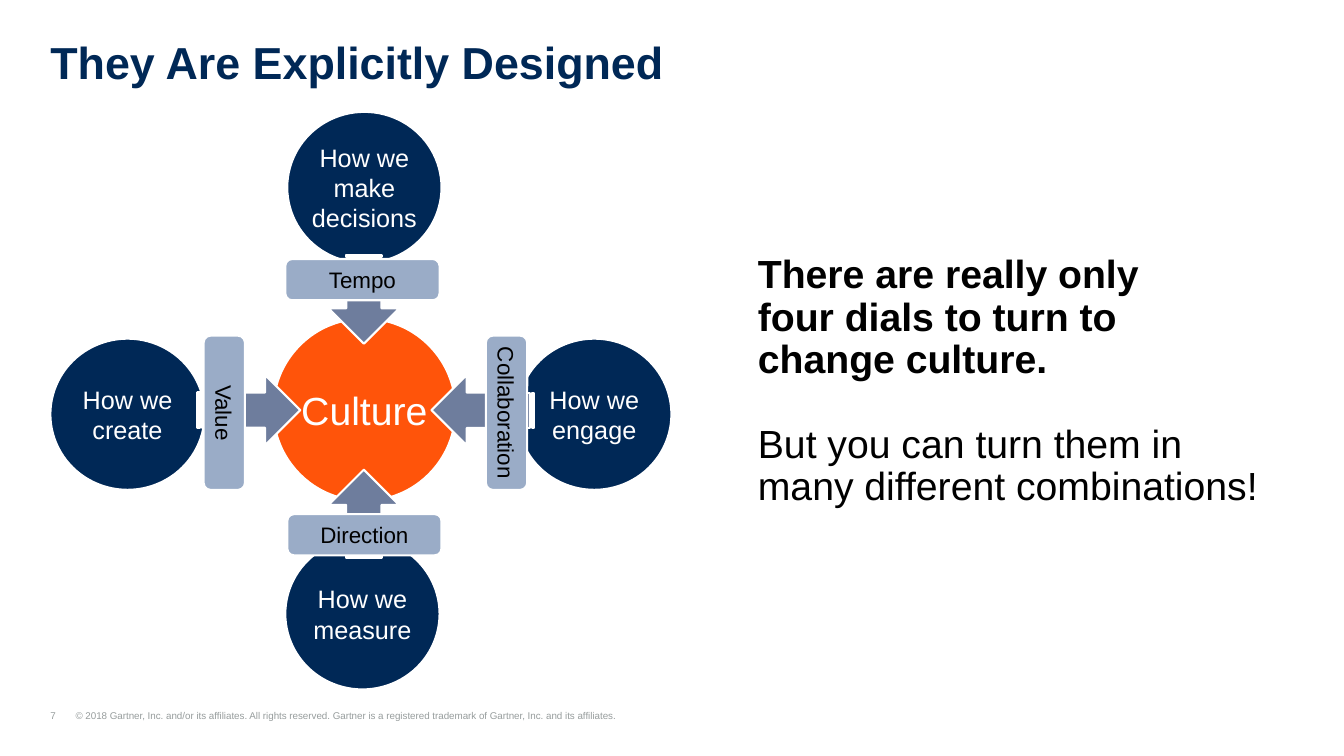
from dataclasses import dataclass

from lxml.etree import SubElement
from pptx import Presentation
from pptx.dml.color import RGBColor
from pptx.enum.shapes import MSO_SHAPE as Kind
from pptx.enum.text import MSO_ANCHOR as Anchor, PP_ALIGN as Align
from pptx.oxml.ns import qn
from pptx.util import Pt

NAVY, ORANGE, WHITE, BLACK = "002856", "FF540A", "FFFFFF", "000000"
SLATE, MIST, GRAY = "6E7D9D", "9AACC7", "979D9D"
INDENT = 18


@dataclass
class Look:
    kind: Kind
    wide: float
    high: float
    fill: str
    size: float = 18
    ink: str = WHITE


@dataclass
class Part:
    look: Look
    left: float
    top: float
    text: str = ""
    turn: float = 0


HUB = Look(Kind.FLOWCHART_CONNECTOR, 130.3, 130.3, ORANGE, 28)
DISC = Look(Kind.FLOWCHART_CONNECTOR, 110.2, 108, NAVY)
LONG = Look(Kind.STRIPED_RIGHT_ARROW, 73.4, 50.4, SLATE)
SHORT = Look(Kind.STRIPED_RIGHT_ARROW, 63.4, 50.4, SLATE)
PILL = Look(Kind.FLOWCHART_ALTERNATE_PROCESS, 110.2, 29.5, MIST, 16, BLACK)

PARTS = [
    Part(HUB, 195.1, 227.5, "Culture"),
    Part(DISC, 205.2, 79.9, "How we make decisions"),
    Part(DISC, 203.8, 384.5, "How we measure"),
    Part(DISC, 36, 241.9, "How we create"),
    Part(DISC, 369.4, 241.9, "How we engage"),
    Part(LONG, 141.1, 267.8),
    Part(SHORT, 228.2, 342, turn=270),
    Part(SHORT, 228.2, 188.6, turn=90),
    Part(LONG, 308.2, 267.8, turn=180),
    Part(PILL, 203.8, 185, "Tempo"),
    Part(PILL, 306.7, 280.1, "Collaboration", 90),
    Part(PILL, 205.2, 367.2, "Direction"),
    Part(PILL, 105.1, 280.1, "Value", 90),
]


def paint(target, color: str) -> None:
    """Set a solid colour on a fill."""
    target.solid()
    target.fore_color.rgb = RGBColor.from_string(color)


def write(frame, text: str, *, size: float, color: str = BLACK, bold: bool = False,
          align=Align.LEFT, space: float = 1, before: float = 0):
    """Fill the frame's first paragraph, or add one if it is taken."""
    para = frame.add_paragraph() if frame.text else frame.paragraphs[0]
    para.text = text
    para.alignment, para.line_spacing = align, space
    if before:
        para.space_before = Pt(before)
    for run in para.runs:
        font = run.font
        font.name, font.size, font.bold = "Arial", Pt(size), bold
        paint(font.fill, color)
    return para


def inset(frame, left: float = 0, rest: float = 0) -> None:
    frame.word_wrap = True
    frame.margin_left = Pt(left)
    frame.margin_top = frame.margin_right = frame.margin_bottom = Pt(rest)


def add_box(slide, left: float, top: float, wide: float, high: float,
            rest: float = 0):
    frame = slide.shapes.add_textbox(Pt(left), Pt(top), Pt(wide), Pt(high)).text_frame
    inset(frame, rest=rest)
    return frame


def draw(slide, part: Part) -> None:
    look = part.look
    shape = slide.shapes.add_shape(look.kind, Pt(part.left), Pt(part.top),
                                   Pt(look.wide), Pt(look.high))
    shape.rotation = part.turn
    shape.shadow.inherit = False
    paint(shape.fill, look.fill)
    paint(shape.line.fill, WHITE)
    shape.line.width = Pt(1.5)
    if part.text:
        frame = shape.text_frame
        inset(frame)
        frame.vertical_anchor = Anchor.MIDDLE
        write(frame, part.text, size=look.size, color=look.ink, align=Align.CENTER)


def add_foot(slide) -> None:
    frame = add_box(slide, 36, 506.9, 565.2, 8.6)
    frame.vertical_anchor = Anchor.BOTTOM
    para = write(
        frame,
        "7\t© 2018 Gartner, Inc. and/or its affiliates. All rights reserved. "
        "Gartner is a registered trademark of Gartner, Inc. and its affiliates.",
        size=7, color=GRAY)
    props = para._p.get_or_add_pPr()
    props.set("marL", str(Pt(INDENT)))
    props.set("indent", str(-Pt(INDENT)))
    tabs = SubElement(props, qn("a:tabLst"))
    SubElement(tabs, qn("a:tab"), pos=str(Pt(INDENT)), algn="l")


def main() -> None:
    deck = Presentation()
    deck.slide_width, deck.slide_height = Pt(960), Pt(540)
    slide = deck.slides.add_slide(deck.slide_layouts[6])

    add_foot(slide)
    title = add_box(slide, 36, 28.8, 887.8, 34.6)
    write(title, "They Are Explicitly Designed", size=32, color=NAVY, bold=True,
          space=0.9)
    for part in PARTS:
        draw(slide, part)

    body = add_box(slide, 541.4, 172.8, 371.5, 207.4, rest=9.4)
    write(body, "There are really only\nfour dials to turn to\nchange culture.",
          size=28, bold=True, space=0.9)
    write(body, "But you can turn them in many different combinations!",
          size=28, space=0.9, before=30)
    deck.save("out.pptx")


if __name__ == "__main__":
    main()
